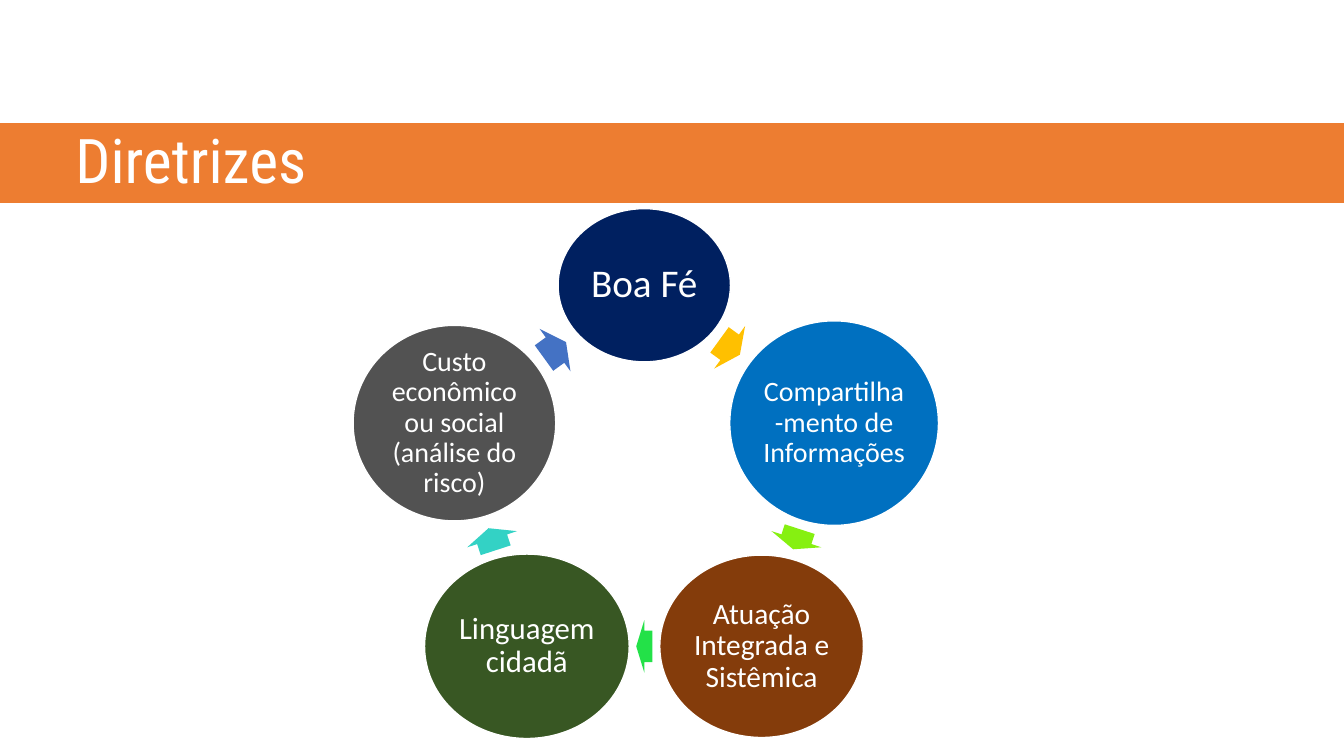
from dataclasses import dataclass
from math import cos, radians, sin

from pptx import Presentation
from pptx.dml.color import RGBColor
from pptx.enum.shapes import MSO_SHAPE
from pptx.enum.text import MSO_ANCHOR, PP_ALIGN
from pptx.util import Inches, Pt

ELLIPSE = MSO_SHAPE.OVAL
ARROW = MSO_SHAPE.RIGHT_ARROW
RECTANGLE = MSO_SHAPE.RECTANGLE
MIDDLE = MSO_ANCHOR.MIDDLE
CENTER = PP_ALIGN.CENTER
LEFT = PP_ALIGN.LEFT


@dataclass(frozen=True)
class Theme:
    white: str = "FFFFFF"
    banner: str = "ED7D31"
    body_font: str = "Calibri"
    title_font: str = "Roboto Condensed"
    title_size: int = 44
    circle_colors: tuple = ("002060", "0070C0", "843C0B", "385723", "525252")
    circle_sizes: tuple = (28, 20, 21, 22, 20)
    arrow_colors: tuple = ("FFC000", "86F011", "23E148", "33D2C5", "4472C4")


THEME = Theme()

CYCLE_X, CYCLE_Y, CYCLE_RADIUS = 6.39, 4.81, 1.98
ARROW_HEIGHT = 0.52
GUIDELINES = (
    ("Boa Fé", 1.71, 1.52),
    ("Compartilha-mento de Informações", 2.07, 2.03),
    ("Atuação Integrada e Sistêmica", 2.02, 1.81),
    ("Linguagem cidadã", 2.03, 1.83),
    ("Custo econômico ou social (análise do risco)", 2.01, 1.94),
)
ARROW_WIDTHS = (0.25, 0.21, 0.16, 0.23, 0.27)
ARROW_POSITIONS = (0.45, 0.52, 0.5, 0.48, 0.53)
STEP = 360 / len(GUIDELINES)


def add_filled_shape(slide, kind, left, top, width, height, color, outlined):
    shape = slide.shapes.add_shape(
        kind, Inches(left), Inches(top), Inches(width), Inches(height))
    shape.shadow.inherit = False
    shape.fill.solid()
    shape.fill.fore_color.rgb = RGBColor.from_string(color)
    if outlined:
        shape.line.color.rgb = RGBColor.from_string(THEME.white)
        shape.line.width = Pt(1)
    else:
        shape.line.fill.background()
    return shape


def write_text(shape, text, font, size, alignment):
    frame = shape.text_frame
    frame.word_wrap = True
    frame.vertical_anchor = MIDDLE
    paragraph = frame.paragraphs[0]
    paragraph.text = text
    paragraph.alignment = alignment
    paragraph.line_spacing = 0.9
    paragraph.font.name = font
    paragraph.font.size = Pt(size)
    paragraph.font.color.rgb = RGBColor.from_string(THEME.white)
    return frame


def cycle_point(index):
    angle = radians(STEP * index)
    return CYCLE_X + CYCLE_RADIUS * sin(angle), CYCLE_Y - CYCLE_RADIUS * cos(angle)


def add_circle(slide, index):
    text, width, height = GUIDELINES[index]
    x, y = cycle_point(index)
    circle = add_filled_shape(slide, ELLIPSE, x - width / 2, y - height / 2,
                              width, height, THEME.circle_colors[index], True)
    frame = write_text(circle, text, THEME.body_font,
                       THEME.circle_sizes[index], CENTER)
    frame.margin_left = frame.margin_right = Inches(0.03)
    frame.margin_top = frame.margin_bottom = Inches(0.03)


def add_arrow(slide, index):
    start_x, start_y = cycle_point(index)
    end_x, end_y = cycle_point(index + 1)
    position = ARROW_POSITIONS[index]
    x = start_x + (end_x - start_x) * position
    y = start_y + (end_y - start_y) * position
    width = ARROW_WIDTHS[index]
    arrow = add_filled_shape(slide, ARROW, x - width / 2, y - ARROW_HEIGHT / 2,
                             width, ARROW_HEIGHT, THEME.arrow_colors[index], False)
    arrow.adjustments[0] = 0.6
    arrow.adjustments[1] = 0.5
    arrow.rotation = STEP * (index + 0.5)


def add_title(slide, text):
    add_filled_shape(slide, RECTANGLE, -0.3, 1.21, 13.88, 0.81, THEME.banner, True)
    title = slide.shapes.add_textbox(
        Inches(0.65), Inches(0.9), Inches(11.5), Inches(1.45))
    write_text(title, text, THEME.title_font, THEME.title_size, LEFT)


def main():
    presentation = Presentation()
    presentation.slide_width = Inches(13.33)
    presentation.slide_height = Inches(7.5)
    slide = presentation.slides.add_slide(presentation.slide_layouts[6])
    for index in range(len(GUIDELINES)):
        add_circle(slide, index)
        add_arrow(slide, index)
    add_title(slide, "Diretrizes")
    presentation.save("out.pptx")


if __name__ == "__main__":
    main()
